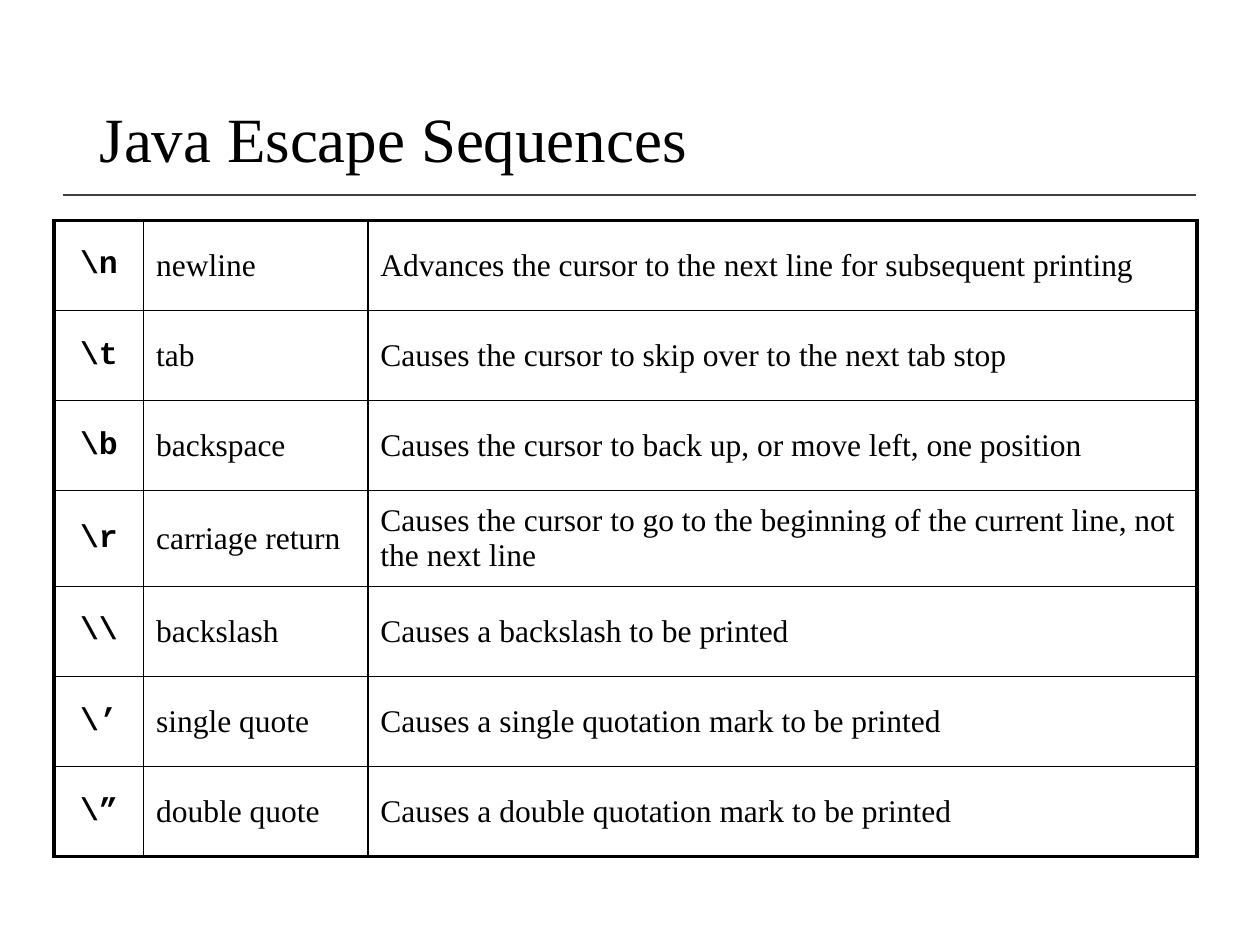
from lxml import etree
from pptx import Presentation
from pptx.dml.color import RGBColor
from pptx.enum.shapes import MSO_CONNECTOR
from pptx.enum.text import MSO_ANCHOR, PP_ALIGN
from pptx.oxml.ns import qn
from pptx.util import Inches, Pt

# Content
TITLE = "Java Escape Sequences"
SEQUENCES = [
    (r"\n", "newline", "Advances the cursor to the next line for subsequent printing"),
    (r"\t", "tab", "Causes the cursor to skip over to the next tab stop"),
    (r"\b", "backspace", "Causes the cursor to back up, or move left, one position"),
    (r"\r", "carriage return",
     "Causes the cursor to go to the beginning of the current line, not the next line"),
    (r"\\", "backslash", "Causes a backslash to be printed"),
    (r"\’", "single quote", "Causes a single quotation mark to be printed"),
    (r"\”", "double quote", "Causes a double quotation mark to be printed"),
]

# Format
COLORS = {"text": "000000", "border": "000000", "rule": "404040", "page": "FFFFFF"}
SERIF, MONO = "Times New Roman", "Courier New"
COLUMN_WIDTHS = [0.71, 1.78, 6.58]
ROW_HEIGHT, TALL_ROW_HEIGHT, TALL_ROW = 0.715, 0.76, 3
THIN, THICK = 1, 2.25


def write_text(frame, text, size=18, font=SERIF, bold=False,
               align=PP_ALIGN.LEFT, spacing=None):
    para = frame.paragraphs[0]
    para.alignment = align
    para.line_spacing = spacing
    span = para.add_run()
    span.text = text
    span.font.size = Pt(size)
    span.font.name = font
    span.font.bold = bold
    span.font.color.rgb = RGBColor.from_string(COLORS["text"])


def set_borders(cell, widths):
    properties = cell._tc.get_or_add_tcPr()
    for position, (side, width) in enumerate(widths.items()):
        line = etree.Element(qn(f"a:ln{side}"), w=str(int(Pt(width))))
        fill = etree.SubElement(line, qn("a:solidFill"))
        etree.SubElement(fill, qn("a:srgbClr"), val=COLORS["border"])
        properties.insert(position, line)


deck = Presentation()
deck.slide_width, deck.slide_height = Inches(10), Inches(7.5)
page = deck.slides.add_slide(deck.slide_layouts[5])
page.background.fill.solid()
page.background.fill.fore_color.rgb = RGBColor.from_string(COLORS["page"])

# Title
title = page.shapes.title
title.left, title.top = Inches(0.69), Inches(0.4)
title.width, title.height = Inches(8.62), Inches(1.45)
title.text_frame.vertical_anchor = MSO_ANCHOR.MIDDLE
write_text(title.text_frame, TITLE, size=36, spacing=0.9)

# Rule under the title
rule = page.shapes.add_connector(
    MSO_CONNECTOR.STRAIGHT, Inches(0.5), Inches(1.55), Inches(9.49), Inches(1.55))
rule.line.color.rgb = RGBColor.from_string(COLORS["rule"])
rule.line.width = Pt(1)
etree.SubElement(rule._element.spPr, qn("a:effectLst"))

# Table with a thick outer frame and thin inner lines
row_heights = [TALL_ROW_HEIGHT if i == TALL_ROW else ROW_HEIGHT
               for i in range(len(SEQUENCES))]
table = page.shapes.add_table(
    len(SEQUENCES), len(COLUMN_WIDTHS), Inches(0.43), Inches(1.75),
    Inches(sum(COLUMN_WIDTHS)), Inches(sum(row_heights))).table
table.first_row = table.horz_banding = False
for column, width in zip(table.columns, COLUMN_WIDTHS):
    column.width = Inches(width)
last_row, last_column = len(SEQUENCES) - 1, len(COLUMN_WIDTHS) - 1
for i, (sequence, height) in enumerate(zip(SEQUENCES, row_heights)):
    table.rows[i].height = Inches(height)
    for j, text in enumerate(sequence):
        cell = table.cell(i, j)
        cell.fill.background()
        cell.vertical_anchor = MSO_ANCHOR.MIDDLE
        set_borders(cell, {
            "L": THICK if j == 0 else THIN,
            "R": THICK if j == last_column else THIN,
            "T": THICK if i == 0 else THIN,
            "B": THICK if i == last_row else THIN,
        })
        if j == 0:
            write_text(cell.text_frame, text, font=MONO, bold=True, align=PP_ALIGN.CENTER)
        else:
            write_text(cell.text_frame, text)

deck.save("out.pptx")
